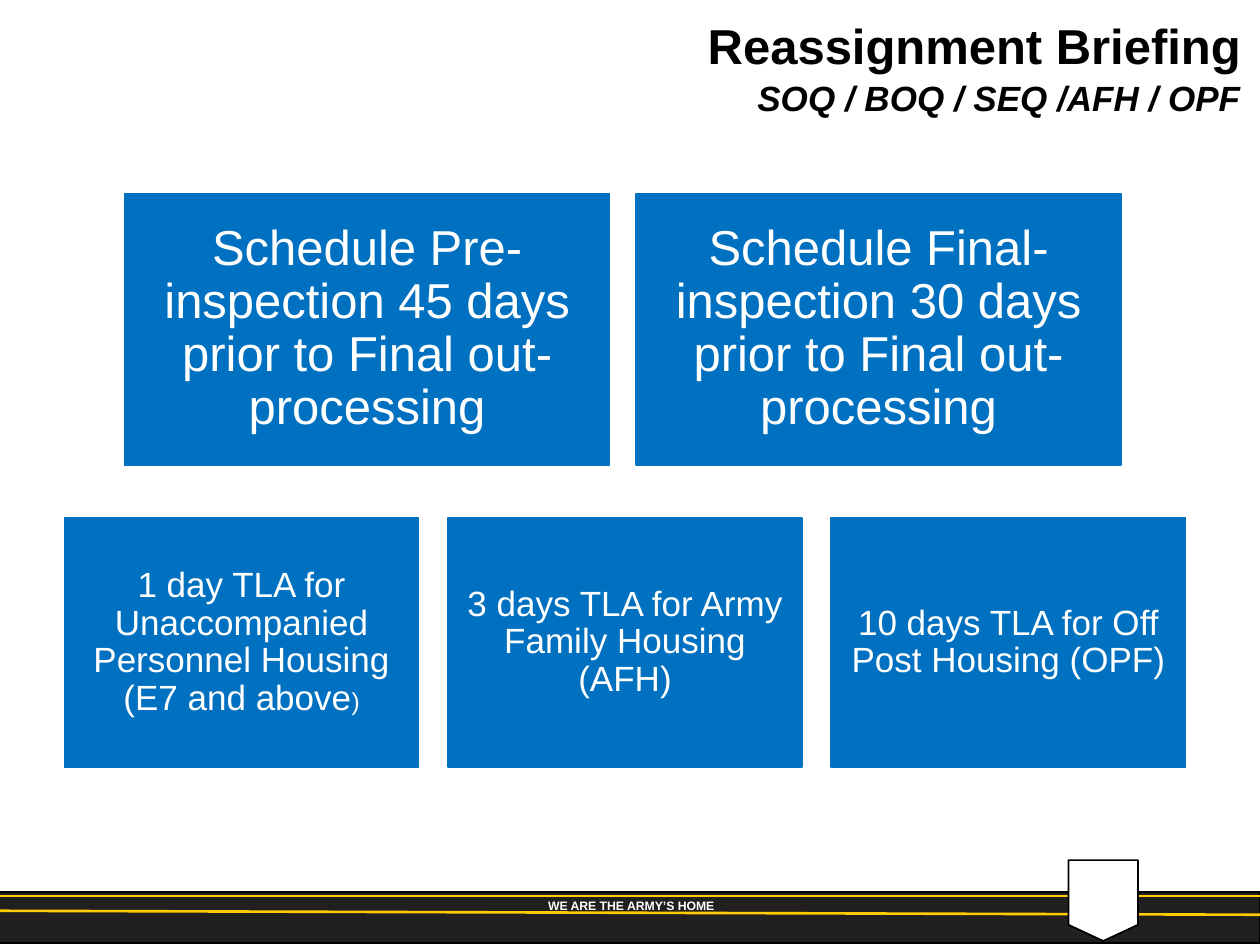
from dataclasses import dataclass

from lxml import etree
from pptx import Presentation
from pptx.dml.color import RGBColor
from pptx.enum.shapes import MSO_CONNECTOR, MSO_SHAPE
from pptx.enum.text import MSO_ANCHOR, PP_ALIGN
from pptx.oxml.ns import qn
from pptx.util import Cm, Pt

RECTANGLE = MSO_SHAPE.RECTANGLE
SHIELD = MSO_SHAPE.FLOWCHART_OFFPAGE_CONNECTOR
STRAIGHT = MSO_CONNECTOR.STRAIGHT
MIDDLE = MSO_ANCHOR.MIDDLE
CENTER, RIGHT = PP_ALIGN.CENTER, PP_ALIGN.RIGHT


@dataclass(frozen=True)
class Theme:
    font: str = "Arial"
    white: RGBColor = RGBColor(0xFF, 0xFF, 0xFF)
    black: RGBColor = RGBColor(0x00, 0x00, 0x00)
    blue: RGBColor = RGBColor(0x00, 0x70, 0xC0)
    charcoal: RGBColor = RGBColor(0x22, 0x1F, 0x20)
    gold: RGBColor = RGBColor(0xFF, 0xCC, 0x01)
    large: int = 28
    medium: int = 20
    small: int = 14
    footer: int = 7


class SlideBuilder:
    def __init__(self, slide, theme):
        self.slide = slide
        self.theme = theme

    def style(self, run, size, color, bold=False, italic=False):
        run.font.name = self.theme.font
        run.font.size = Pt(size)
        run.font.color.rgb = color
        run.font.bold = bold
        run.font.italic = italic

    def frame(self, shape, inset=0, top_inset=None):
        text_frame = shape.text_frame
        text_frame.word_wrap = True
        text_frame.vertical_anchor = MIDDLE
        text_frame.margin_left = text_frame.margin_right = Cm(inset)
        text_frame.margin_bottom = Cm(inset)
        text_frame.margin_top = Cm(inset if top_inset is None else top_inset)
        return text_frame

    def box(self, kind, left, top, width, height, fill, line):
        shape = self.slide.shapes.add_shape(
            kind, Cm(left), Cm(top), Cm(width), Cm(height))
        shape.shadow.inherit = False
        shape.fill.solid()
        shape.fill.fore_color.rgb = fill
        shape.line.color.rgb = line
        shape.line.width = Pt(1)
        return shape

    def card(self, left, top, width, height, text, size, inset, tail=""):
        theme = self.theme
        shape = self.box(RECTANGLE, left, top, width, height, theme.blue, theme.blue)
        paragraph = self.frame(shape, inset).paragraphs[0]
        paragraph.text = text
        paragraph.alignment = CENTER
        paragraph.line_spacing = 0.9
        self.style(paragraph.runs[0], size, theme.white)
        if tail:
            run = paragraph.add_run()
            run.text = tail
            self.style(run, theme.small, theme.white)

    def card_row(self, left, top, width, height, pitch, size, inset, cards):
        for index, (text, tail) in enumerate(cards):
            self.card(left + index * pitch, top, width, height, text, size, inset, tail)

    def stripe(self, left, start, right, end):
        connector = self.slide.shapes.add_connector(
            STRAIGHT, Cm(left), Cm(start), Cm(right), Cm(end))
        connector.line.color.rgb = self.theme.gold
        connector.line.width = Pt(1.5)
        properties = connector.element.find(qn("p:spPr"))
        etree.SubElement(properties, qn("a:effectLst"))

    def text(self, left, top, width, height, lines, color, alignment, top_inset=0):
        shape = self.slide.shapes.add_textbox(
            Cm(left), Cm(top), Cm(width), Cm(height))
        text_frame = self.frame(shape, top_inset=top_inset)
        text_frame.text = "\n".join(text for text, _, _ in lines)
        for index, paragraph in enumerate(text_frame.paragraphs):
            _, size, italic = lines[index]
            paragraph.alignment = alignment
            if index:
                paragraph.space_before = Pt(1.1)
            self.style(paragraph.runs[0], size, color, bold=True, italic=italic)


def main():
    theme = Theme()
    presentation = Presentation()
    presentation.slide_width = Cm(25.4)
    presentation.slide_height = Cm(19.05)
    slide = presentation.slides.add_slide(presentation.slide_layouts[6])
    builder = SlideBuilder(slide, theme)

    builder.box(RECTANGLE, -0.03, 17.99, 25.43, 1.02, theme.charcoal, theme.black)
    builder.stripe(-0.03, 18.06, 25.45, 18.06)
    builder.text(9.4, 17.98, 6.65, 0.56,
                 [("WE ARE THE ARMY’S HOME", theme.footer, False)],
                 theme.white, CENTER)
    builder.stripe(-0.08, 18.36, 25.43, 18.44)
    builder.box(SHIELD, 21.54, 17.34, 1.4, 1.63, theme.white, theme.black)

    builder.card_row(2.51, 3.91, 9.78, 5.46, 10.31, theme.large, 0.3, [
        ("Schedule Pre-inspection 45 days prior to Final out-processing", ""),
        ("Schedule Final-inspection 30 days prior to Final out-processing", ""),
    ])
    builder.card_row(1.3, 10.44, 7.14, 5.03, 7.73, theme.medium, 0.2, [
        ("1 day TLA for Unaccompanied Personnel Housing (E7 and above", ")"),
        ("3 days TLA for Army Family Housing (AFH)", ""),
        ("10 days TLA for Off Post Housing (OPF)", ""),
    ])
    builder.text(4.01, -0.03, 21, 2.44, [
        ("Reassignment Briefing", theme.large, False),
        ("SOQ / BOQ / SEQ /AFH / OPF", theme.medium, True),
    ], theme.black, RIGHT, top_inset=0.33)

    presentation.save("out.pptx")


if __name__ == "__main__":
    main()
